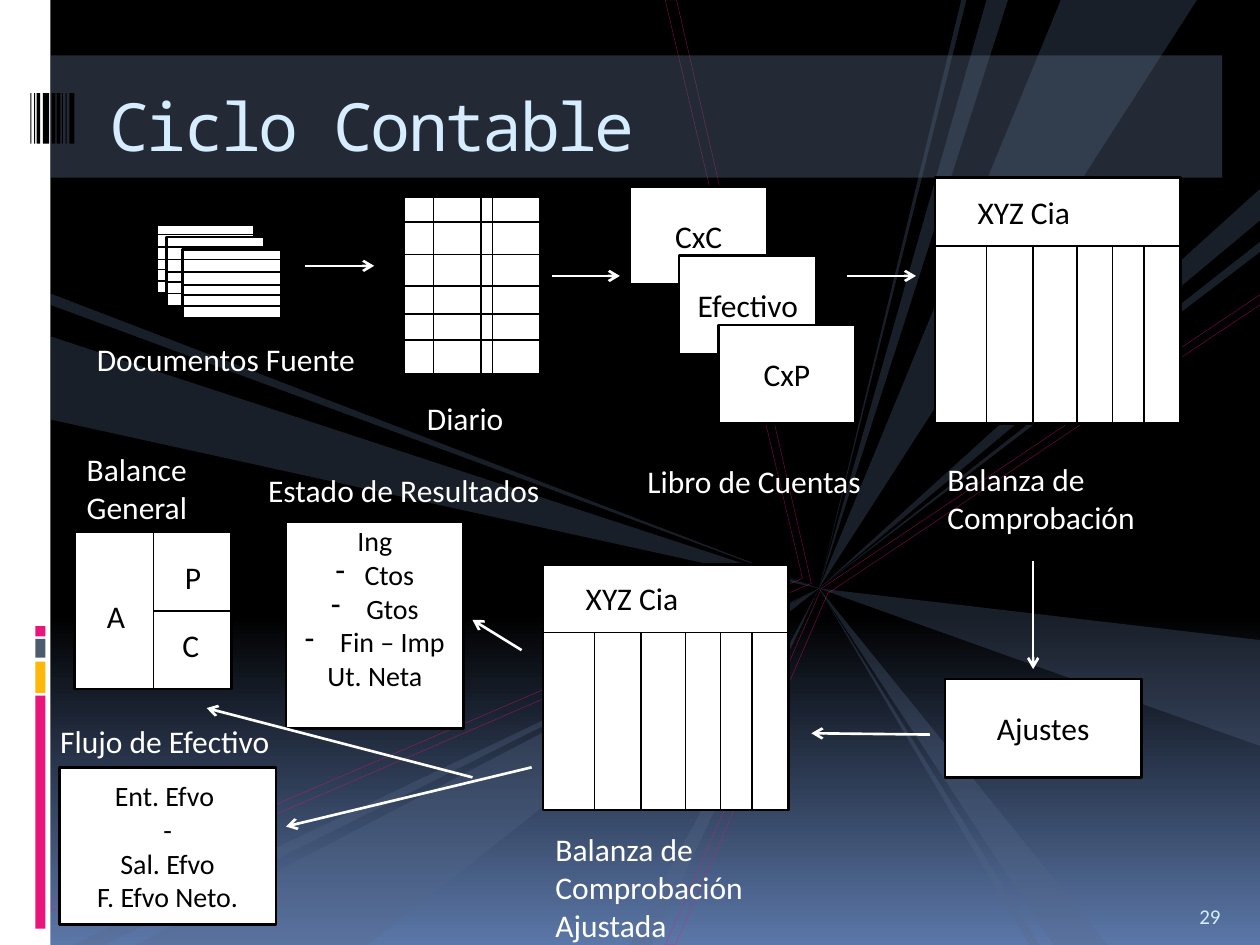
"""Build the accounting cycle slide."""
from dataclasses import dataclass

from lxml.etree import SubElement
from pptx import Presentation
from pptx.dml.color import RGBColor
from pptx.enum.shapes import MSO_CONNECTOR, MSO_SHAPE
from pptx.enum.text import MSO_ANCHOR, MSO_AUTO_SIZE, PP_ALIGN
from pptx.oxml.ns import qn
from pptx.shapes.autoshape import Shape
from pptx.shapes.connector import Connector
from pptx.shapes.shapetree import GroupShapes, SlideShapes
from pptx.slide import Slide
from pptx.text.text import TextFrame
from pptx.util import Inches, Pt

RECTANGLE, STRAIGHT = MSO_SHAPE.RECTANGLE, MSO_CONNECTOR.STRAIGHT
LEFT, CENTER = PP_ALIGN.LEFT, PP_ALIGN.CENTER
TOP, MIDDLE, BOTTOM = MSO_ANCHOR.TOP, MSO_ANCHOR.MIDDLE, MSO_ANCHOR.BOTTOM
NO_AUTO_SIZE = MSO_AUTO_SIZE.NONE
COLORS = {"black": "000000", "white": "FFFFFF", "pink": "EA157A", "amber": "FEB80A",
          "slate": "4E5B6F", "ray": "566989", "band": "586A86", "sky": "5B77A8",
          "title": "D6ECFF"}
BODY_FONT, TITLE_FONT = "Calibri", "Noto Sans Mono"
BULLET = "- "
Point = tuple[float, float]
Box = tuple[float, float, float, float]
Shapes = SlideShapes | GroupShapes


@dataclass(frozen=True)
class Bar:
    """A plain rectangle of the backdrop."""
    box: Box
    color: str


@dataclass(frozen=True)
class Sheet:
    """A ruled page, with rules given as offsets from its corner."""
    box: Box
    rows: tuple[float, ...]
    columns: tuple[float, ...]
    column_top: float = 0


@dataclass(frozen=True)
class Card:
    """A white box with centred lines."""
    box: Box
    lines: tuple[str, ...] = ()
    size: int = 18
    bottom_inset: float = 0.05


@dataclass(frozen=True)
class Label:
    """A free text with one paragraph per line."""
    box: Box
    lines: tuple[str, ...]
    color: str = "white"
    wrap: bool = False
    size: int = 18
    anchor: MSO_ANCHOR = TOP


BARS = [Bar((0, 0, 0.4, 7.5), "white")]
BARS += [Bar((0.28, top, 0.08, height), color) for top, height, color in (
    (5.52, 1.85, "pink"), (5.25, 0.25, "amber"), (5.07, 0.15, "slate"), (4.97, 0.08, "pink"))]
BARCODE = [Bar((left, 0.74, width, 0.4), "black") for left, width in (
    (0.24, 0.01), (0.27, 0.01), (0.29, 0.03), (0.34, 0.05), (0.41, 0.03),
    (0.45, 0.03), (0.49, 0.01), (0.52, 0.01), (0.55, 0.04))]
TITLE_BAND = Bar((0.4, 0.44, 9.3, 0.97), "band")
HUB = (6.5, 4.67)
RAY_ENDS = [
    ((7.67, 0), (7.63, 0)), ((8.42, 0), (9.5, 0)), ((10, 5.08), (10, 5.92)),
    ((8, 0), (7.83, 0)), ((8.36, 7.5), (8.79, 7.5)), ((8.25, 7.5), (8.17, 7.5)),
    ((10, 1.5), (10, 1.75)), ((10, 1.92), (10, 2)), ((1.08, 7.5), (2.92, 7.5)),
    ((0.58, 7.5), (0.83, 7.5)), ((0.4, 2.67), (0.4, 3.33)), ((0.4, 2.33), (0.4, 2.42)),
    ((5, 7.5), (5.17, 7.5))]
OUTLINES = [
    [(5.28, 7.5), (6.52, 4.67), (10, 2.34), (10, 2.42), (6.57, 4.71), (5.36, 7.5)],
    [(0.41, 7.15), (0.41, 7.23), (6.44, 4.63), (5.37, 0), (5.28, 0), (6.37, 4.59)]]

BALANCES = [(7.42, 1.41), (4.31, 4.48)]
SHEETS = [Sheet((left, top, 0.78, 0.55), (0.08, 0.18, 0.28, 0.36, 0.45), ())
          for left, top in ((1.24, 1.78), (1.32, 1.88), (1.45, 1.98))]
SHEETS += [Sheet((3.2, 1.56, 1.09, 1.41), (0.2, 0.46, 0.71, 0.93, 1.14), (0.24, 0.62, 0.71))]
SHEETS += [Sheet((left, top, 1.95, 1.95), (0.54,), (0.41, 0.78, 1.13, 1.41, 1.66), 0.54)
           for left, top in BALANCES]
CARDS = [Card((left, top, 1.09, 0.78), (name,)) for left, top, name in (
    (5, 1.48, "CxC"), (5.39, 2.03, "Efectivo"), (5.7, 2.58, "CxP"))]
CARDS += [
    Card((7.5, 5.39, 1.56, 0.78), ("Ajustes",)),
    Card((0.59, 4.22, 1.25, 1.25)),
    Card((2.27, 4.14, 1.41, 1.64),
         ("Ing", "- Ctos", "-  Gtos", "-  Fin – Imp", "Ut. Neta"), 16, 0.32),
    Card((0.47, 6.09, 1.72, 1.25), ("Ent. Efvo ", "-", "Sal. Efvo", "F. Efvo Neto."), 16)]
BALANCE_RULES = [((1.22, 4.22), (1.22, 5.47)), ((1.22, 4.85), (1.84, 4.85))]
LABELS = [Label((left + 0.24, top + 0.07, 1.41, 0.4), ("XYZ Cia",), "black", True)
          for left, top in BALANCES]
LABELS += [Label((left, top, 0.36, 0.4), (letter,), "black", True) for left, top, letter in (
    (0.75, 4.69, "A"), (1.37, 4.38, "P"), (1.35, 4.92, "C"))]
LABELS += [
    Label((0.67, 2.65, 2.32, 0.4), ("Documentos Fuente",)),
    Label((3.29, 3.12, 0.83, 0.4), ("Diario",)),
    Label((5.04, 3.62, 1.95, 0.4), ("Libro de Cuentas",)),
    Label((7.42, 3.6, 1.74, 0.71), ("Balanza de", "Comprobación")),
    Label((4.31, 6.54, 2.25, 1.01), ("Balanza de", "Comprobación Ajustada"), wrap=True),
    Label((0.59, 3.52, 1.03, 0.71), ("Balance", "General")),
    Label((2.03, 3.69, 2.43, 0.4), ("Estado de Resultados",)),
    Label((0.38, 5.68, 1.93, 0.4), ("Flujo de Efectivo",)),
    Label((9.42, 7.02, 0.5, 0.4), ("29",), "title", True, 12, BOTTOM)]
ARROWS = [
    ((2.42, 2.11), (2.97, 2.11)), ((4.38, 2.19), (4.92, 2.19)), ((6.72, 2.19), (7.27, 2.19)),
    ((8.2, 4.45), (8.2, 5.31)), ((7.38, 5.83), (6.44, 5.82)), ((4.14, 5.16), (3.75, 4.92)),
    ((4.22, 6.09), (2.27, 6.56)), ((3.75, 6.17), (1.64, 5.62))]


def rgb(name: str) -> RGBColor:
    """Look up a named colour."""
    return RGBColor.from_string(COLORS[name])


def set_opacity(shape: Shape, percent: int) -> None:
    """Make every colour of a shape translucent."""
    for color in shape._element.spPr.iter(qn("a:srgbClr")):
        SubElement(color, qn("a:alpha")).set("val", str(percent * 1000))


def draw_bar(shapes: Shapes, bar: Bar) -> Shape:
    """Draw a filled rectangle without outline."""
    shape = shapes.add_shape(RECTANGLE, *map(Inches, bar.box))
    shape.shadow.inherit = False
    shape.fill.solid()
    shape.fill.fore_color.rgb = rgb(bar.color)
    shape.line.fill.background()
    return shape


def draw_polygon(shapes: Shapes, points: list[Point]) -> Shape:
    """Draw a closed outline through the points."""
    corners = [(Inches(x), Inches(y)) for x, y in points]
    builder = shapes.build_freeform(*corners[0])
    builder.add_line_segments(corners[1:], close=True)
    shape = builder.convert_to_shape()
    shape.shadow.inherit = False
    return shape


def draw_line(shapes: Shapes, start: Point, end: Point,
              color: str = "black", width: float = 0.94) -> Connector:
    """Draw a straight line without shadow."""
    line = shapes.add_connector(STRAIGHT, *map(Inches, start + end))
    line.line.color.rgb = rgb(color)
    line.line.width = Pt(width)
    SubElement(line._element.spPr, qn("a:effectLst"))
    return line


def draw_arrow(shapes: Shapes, start: Point, end: Point) -> None:
    """Draw a white line with an open head at its end."""
    arrow = draw_line(shapes, start, end, "white", 1.5)
    SubElement(arrow.line._get_or_add_ln(), qn("a:tailEnd")).set("type", "arrow")


def write_lines(frame: TextFrame, lines: tuple[str, ...], size: int, color: str,
                alignment: PP_ALIGN = LEFT, font: str = BODY_FONT) -> None:
    """Write one paragraph per line, with a hanging dash where marked."""
    for index, text in enumerate(lines):
        paragraph = frame.add_paragraph() if index else frame.paragraphs[0]
        paragraph.alignment = alignment
        if text.startswith(BULLET):
            properties = paragraph._p.get_or_add_pPr()
            properties.set("marL", str(Inches(0.23)))
            properties.set("indent", str(-Inches(0.23)))
            SubElement(properties, qn("a:buChar")).set("char", "-")
        run = paragraph.add_run()
        run.text = text.removeprefix(BULLET)
        run.font.name, run.font.size = font, Pt(size)
        run.font.color.rgb = rgb(color)


def draw_card(shapes: Shapes, card: Card) -> None:
    """Draw a white box outlined in black, with its text."""
    shape = draw_bar(shapes, Bar(card.box, "white"))
    shape.line.color.rgb = rgb("black")
    shape.line.width = Pt(1.5)
    frame = shape.text_frame
    frame.vertical_anchor = MIDDLE
    frame.margin_bottom = Inches(card.bottom_inset)
    write_lines(frame, card.lines, card.size, "black", CENTER)


def draw_sheet(slide: Slide, sheet: Sheet) -> None:
    """Draw a ruled page as one group."""
    shapes = slide.shapes.add_group_shape().shapes
    left, top, width, height = sheet.box
    draw_card(shapes, Card(sheet.box))
    for row in sheet.rows:
        draw_line(shapes, (left, top + row), (left + width, top + row))
    for column in sheet.columns:
        draw_line(shapes, (left + column, top + sheet.column_top), (left + column, top + height))


def draw_label(shapes: Shapes, label: Label) -> None:
    """Draw a text box."""
    frame = shapes.add_textbox(*map(Inches, label.box)).text_frame
    frame.word_wrap = label.wrap
    frame.vertical_anchor = label.anchor
    write_lines(frame, label.lines, label.size, label.color)


def draw_backdrop(slide: Slide) -> None:
    """Draw the gradient, the rays and the side bars."""
    fill = slide.background.fill
    fill.gradient()
    fill.gradient_angle = 270
    for stop, position, color in zip(fill.gradient_stops, (0.65, 1), ("black", "sky")):
        stop.position = position
        stop.color.rgb = rgb(color)
    for bar in BARS:
        draw_bar(slide.shapes, bar)
    for points in OUTLINES:
        outline = draw_polygon(slide.shapes, points)
        outline.fill.background()
        outline.line.color.rgb = rgb("pink")
        outline.line.width = Pt(0.25)
        set_opacity(outline, 53)
    for first, second in RAY_ENDS:
        ray = draw_polygon(slide.shapes, [first, second, HUB])
        ray.fill.solid()
        ray.fill.fore_color.rgb = rgb("ray")
        ray.line.fill.background()
        set_opacity(ray, 30)
    set_opacity(draw_bar(slide.shapes, TITLE_BAND), 40)
    for bar in BARCODE:
        draw_bar(slide.shapes, bar)


def draw_title(slide: Slide, text: str) -> None:
    """Fill the title placeholder and bring it in front of the backdrop."""
    title = slide.shapes.title
    title.left, title.top, title.width, title.height = map(Inches, (0.77, 0.56, 8.92, 0.85))
    frame = title.text_frame
    frame.auto_size, frame.vertical_anchor = NO_AUTO_SIZE, MIDDLE
    frame.margin_top = Inches(0.07)
    write_lines(frame, (text,), 38, "title", font=TITLE_FONT)
    frame.paragraphs[0].runs[0].font._element.set("spc", "-150")
    slide.shapes._spTree.append(title._element)


def main() -> None:
    """Build and save the presentation."""
    presentation = Presentation()
    presentation.slide_width, presentation.slide_height = Inches(10), Inches(7.5)
    slide = presentation.slides.add_slide(presentation.slide_layouts[5])
    draw_backdrop(slide)
    draw_title(slide, "Ciclo Contable")
    for sheet in SHEETS:
        draw_sheet(slide, sheet)
    for card in CARDS:
        draw_card(slide.shapes, card)
    for start, end in BALANCE_RULES:
        draw_line(slide.shapes, start, end)
    for label in LABELS:
        draw_label(slide.shapes, label)
    for start, end in ARROWS:
        draw_arrow(slide.shapes, start, end)
    presentation.save("out.pptx")


if __name__ == "__main__":
    main()
